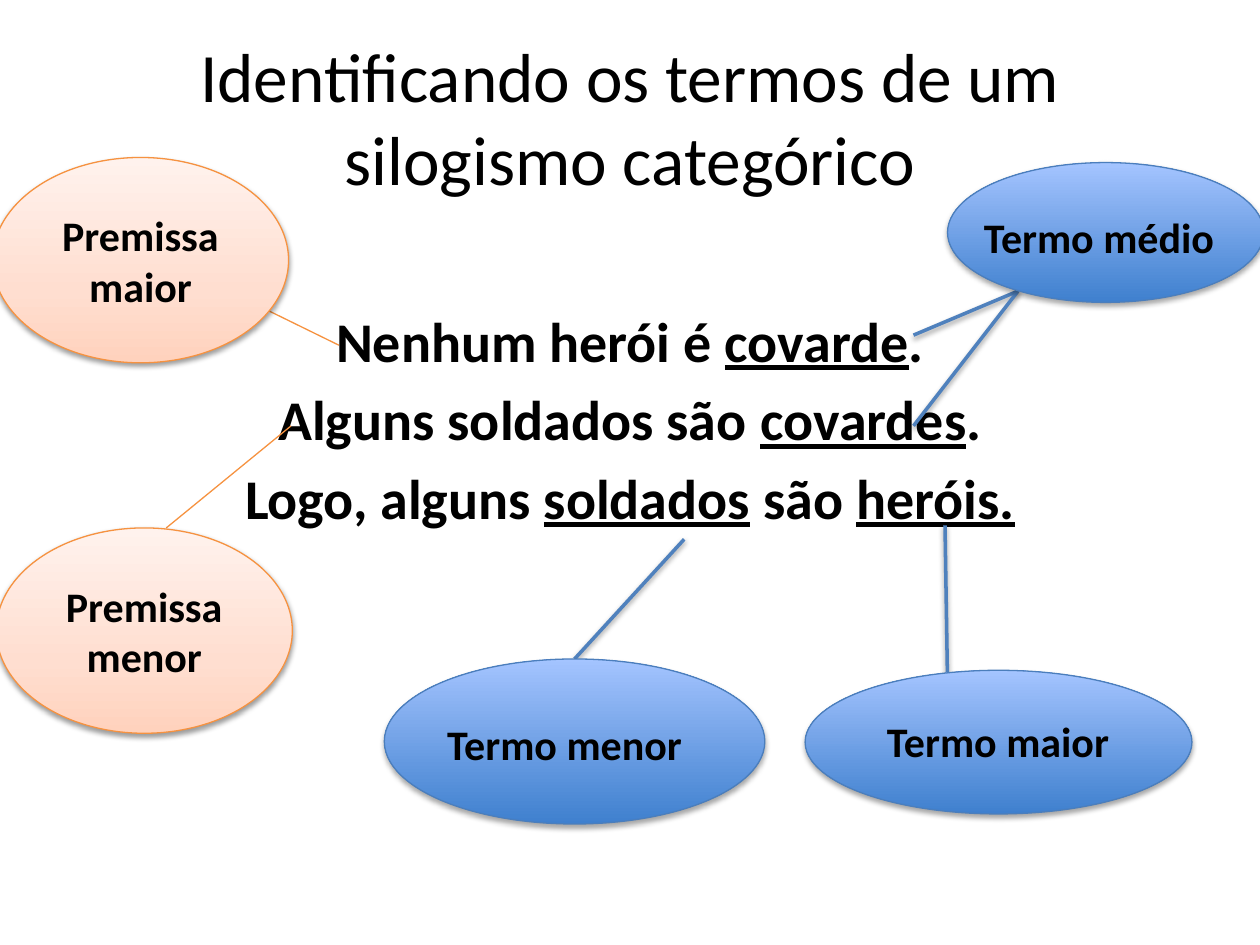
"""Build the slide on identifying the terms of a categorical syllogism."""
from lxml.etree import SubElement
from pptx import Presentation
from pptx.dml.color import RGBColor
from pptx.enum.shapes import MSO_CONNECTOR, MSO_SHAPE
from pptx.enum.text import MSO_ANCHOR, PP_ALIGN
from pptx.oxml.ns import qn
from pptx.util import Inches, Pt

TITLE = "Identificando os termos de um silogismo categórico"
SYLLOGISM = [
    [("Nenhum herói é ", False), ("covarde", True), (".", False)],
    [("Alguns soldados são ", False), ("covardes", True), (".", False)],
    [("Logo, alguns ", False), ("soldados", True), (" são ", False), ("heróis.", True)],
]
BLUE = {
    "stops": [(0, "3F80CE"), (100, "A4C4FF")], "outline": "4B7EBC",
    "shadow": (1.8, 35), "line": ("4F81BD", 2), "line_shadow": (1.6, 38),
}
ORANGE = {
    "stops": [(0, "FFD2BD"), (35, "FFDED0"), (100, "FFF2ED")], "outline": "F69240",
    "shadow": (1.6, 38), "line": ("F69240", 0.75), "line_shadow": None,
}
TERMS = [
    ("Termo maior", (6.39, 5.32, 3.07, 1.14), (6.74, 5.63, 2.36, 0.5), PP_ALIGN.CENTER,
     [(7.5, 4.17, 7.52, 5.39)]),
    ("Termo menor", (3.05, 5.23, 3.02, 1.31), (3.45, 5.65, 2.27, 0.5), PP_ALIGN.LEFT,
     [(5.43, 4.28, 4.56, 5.23)]),
    ("Termo médio", (7.52, 1.29, 2.51, 1.11), (7.71, 1.63, 2.55, 0.5), PP_ALIGN.LEFT,
     [(7.25, 2.66, 8.08, 2.31), (7.25, 3.38, 8.08, 2.31)]),
]
PREMISES = [
    ("Premissa maior", (-0.06, 1.25, 2.35, 1.63), (1.67, 2.24, 2.69, 2.74)),
    ("Premissa menor", (-0.03, 4.19, 2.35, 1.63), (1.32, 4.19, 2.31, 3.38)),
]


def rgb(value):
    return RGBColor.from_string(value)


def inches(values):
    return [Inches(v) for v in values]


def set_font(p, size, bold=True, align=PP_ALIGN.CENTER):
    p.alignment = align
    p.font.name = "Calibri"
    p.font.size = Pt(size)
    p.font.bold = bold
    p.font.color.rgb = rgb("000000")


def set_shadow(sp, shadow):
    effects = SubElement(sp._element.spPr, qn("a:effectLst"))
    if shadow:
        distance, alpha = shadow
        outer = SubElement(effects, qn("a:outerShdw"), blurRad=str(Pt(3.1)),
                           dist=str(Pt(distance)), dir="5400000", rotWithShape="0")
        color = SubElement(outer, qn("a:srgbClr"), val="000000")
        SubElement(color, qn("a:alpha"), val=str(alpha * 1000))


def set_gradient(sp, stops):
    grad = SubElement(sp._element.spPr, qn("a:gradFill"), rotWithShape="1")
    stop_list = SubElement(grad, qn("a:gsLst"))
    for position, value in stops:
        stop = SubElement(stop_list, qn("a:gs"), pos=str(position * 1000))
        SubElement(stop, qn("a:srgbClr"), val=value)
    SubElement(grad, qn("a:lin"), ang="16200000", scaled="0")


def add_text(s, box, anchor=MSO_ANCHOR.TOP):
    tf = s.shapes.add_textbox(*inches(box)).text_frame
    tf.word_wrap = True
    tf.vertical_anchor = anchor
    return tf


def add_oval(s, box, style):
    sp = s.shapes.add_shape(MSO_SHAPE.OVAL, *inches(box))
    set_gradient(sp, style["stops"])
    sp.line.color.rgb = rgb(style["outline"])
    sp.line.width = Pt(0.75)
    set_shadow(sp, style["shadow"])
    return sp


def add_line(s, ends, style):
    line = s.shapes.add_connector(MSO_CONNECTOR.STRAIGHT, *inches(ends))
    color, width = style["line"]
    line.line.color.rgb = rgb(color)
    line.line.width = Pt(width)
    set_shadow(line, style["line_shadow"])


def main():
    prs = Presentation()
    prs.slide_width, prs.slide_height = Inches(10), Inches(7.5)
    s = prs.slides.add_slide(prs.slide_layouts[6])

    p = add_text(s, (0.5, 0.3, 9, 1.25), MSO_ANCHOR.MIDDLE).paragraphs[0]
    p.text = TITLE
    set_font(p, 39.6, bold=False)

    tf = add_text(s, (0.5, 1.75, 9, 4.95))
    tf.margin_top = Inches(0.68)
    for i, parts in enumerate(SYLLOGISM):
        p = tf.add_paragraph() if i else tf.paragraphs[0]
        set_font(p, 32)
        p.space_before = Pt(6.4 if i else 0)
        for text, underlined in parts:
            r = p.add_run()
            r.text = text
            r.font.underline = underlined

    for name, oval, label, align, lines in TERMS:
        for ends in lines:
            add_line(s, ends, BLUE)
        add_oval(s, oval, BLUE)
        p = add_text(s, label).paragraphs[0]
        p.text = name
        set_font(p, 24, align=align)

    for name, oval, ends in PREMISES:
        add_line(s, ends, ORANGE)
        tf = add_oval(s, oval, ORANGE).text_frame
        tf.word_wrap = True
        tf.vertical_anchor = MSO_ANCHOR.MIDDLE
        p = tf.paragraphs[0]
        p.text = name
        set_font(p, 24)

    prs.save("out.pptx")


if __name__ == "__main__":
    main()
